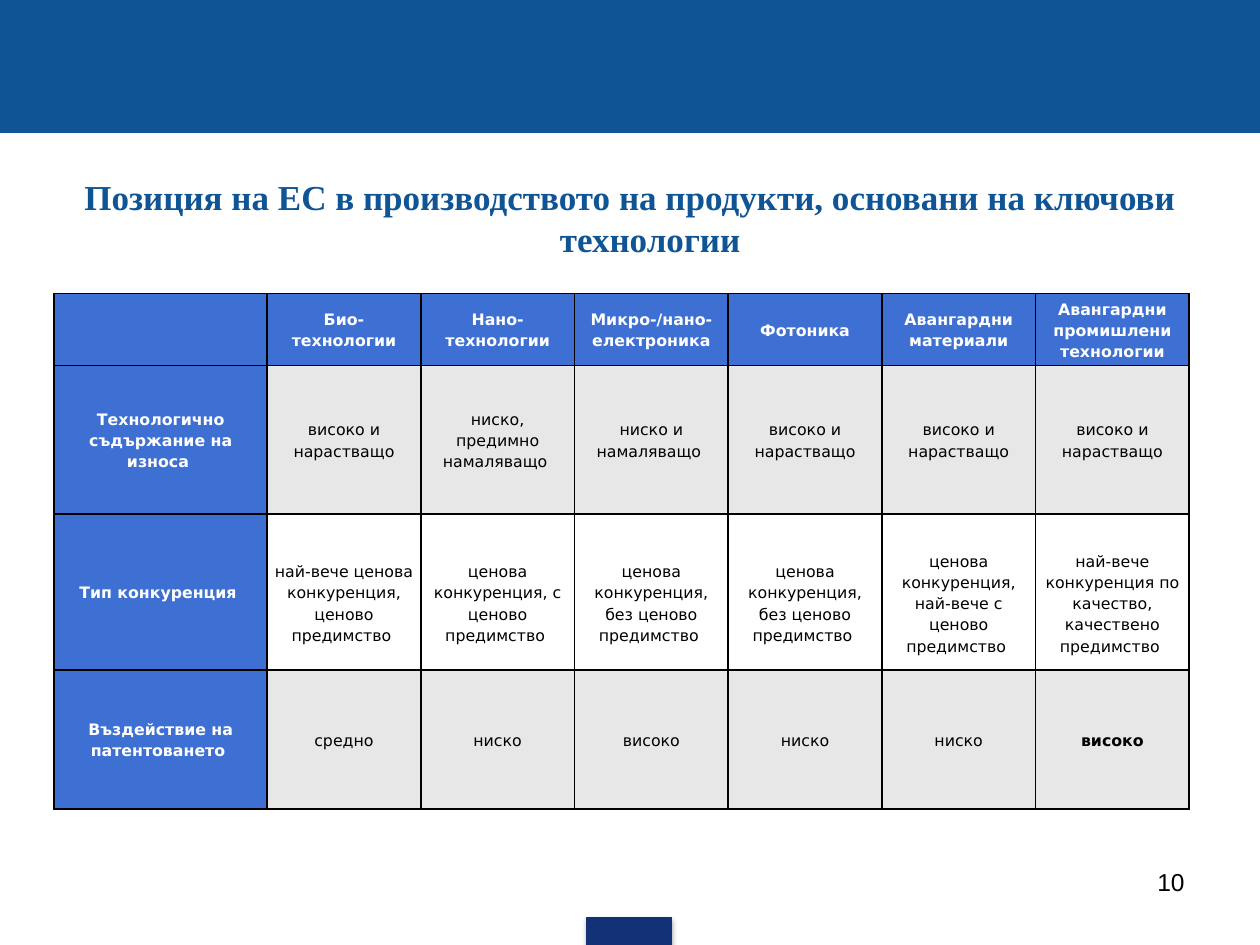
from lxml import etree
from pptx import Presentation
from pptx import util as u
from pptx.dml.color import RGBColor
from pptx.enum import shapes, text
from pptx.oxml import parse_xml
from pptx.oxml.ns import nsdecls, qn

WIDTH, HEIGHT = 10, 7.5
COLORS = {
    "band": "0F5494", "tab": "133176", "header": "3E6FD2", "shaded": "E7E7E7",
    "white": "FFFFFF", "black": "000000",
}
COLUMN_WIDTHS = [1.69] + [1.22] * 6
ROW_HEIGHTS = [0.57, 1.18, 1.24, 1.1]
ROW_FILLS = ["header", "shaded", "white", "shaded"]
ROW_TOP_INSETS = [0, 0, 0.17, 0]
RISING = "високо и нарастващо"
NO_ADVANTAGE = "ценова конкуренция, без ценово предимство "
ROWS = [
    ["", "Био-технологии", "Нано-технологии", "Микро-/нано-електроника", "Фотоника",
     "Авангардни материали", "Авангардни промишлени технологии"],
    ["Технологично съдържание на износа ", RISING, "ниско, предимно намаляващо ",
     "ниско и намаляващо ", RISING, RISING, RISING],
    ["Тип конкуренция ", "най-вече ценова конкуренция, ценово предимство ",
     "ценова конкуренция, с ценово предимство ", NO_ADVANTAGE, NO_ADVANTAGE,
     "ценова конкуренция, най-вече с ценово предимство ",
     "най-вече конкуренция по качество, качествено предимство "],
    ["Въздействие на патентоването ", "средно", "ниско", "високо", "ниско", "ниско", "високо"],
]
BOLD_CELL = (3, 6)


def color(name):
    return RGBColor.from_string(COLORS[name])


class SlideBuilder:
    """Holds the style and the current slide; places are shares of the slide's size."""

    def __init__(self, presentation):
        self.width, self.height = presentation.slide_width, presentation.slide_height
        self.slide = presentation.slides.add_slide(presentation.slide_layouts[5])

    def place(self, left, top, width, height):
        return (round(left * self.width), round(top * self.height),
                round(width * self.width), round(height * self.height))

    def add_run(self, paragraph, words, font, size, color_name, bold=False):
        run = paragraph.add_run()
        run.text = words
        run.font.name, run.font.size, run.font.bold = font, u.Pt(size), bold
        run.font.color.rgb = color(color_name)

    def rectangle(self, share, fill):
        shape = self.slide.shapes.add_shape(shapes.MSO_SHAPE.RECTANGLE, *self.place(*share))
        shape.shadow.inherit = False
        shape.fill.solid()
        shape.fill.fore_color.rgb = shape.line.color.rgb = color(fill)
        shape.line.width = u.Pt(0.75)
        return shape

    def shadow(self, shape):
        effects = shape.element.spPr.find(qn("a:effectLst"))
        effects.append(parse_xml(
            f'<a:outerShdw {nsdecls("a")} blurRad="{u.Pt(3.1)}" dist="{u.Pt(1.8)}" dir="5400000" '
            f'rotWithShape="0"><a:srgbClr val="{COLORS["black"]}"><a:alpha val="35000"/>'
            '</a:srgbClr></a:outerShdw>'))

    def title(self, share, words):
        title = self.slide.shapes.title
        title.left, title.top, title.width, title.height = self.place(*share)
        frame = title.text_frame
        frame.word_wrap = True
        frame.auto_size = text.MSO_AUTO_SIZE.NONE
        frame.vertical_anchor = text.MSO_ANCHOR.MIDDLE
        paragraph = frame.paragraphs[0]
        paragraph.alignment = text.PP_ALIGN.CENTER
        properties = paragraph._p.get_or_add_pPr()
        properties.set("marL", str(u.Inches(0.39)))
        properties.set("indent", str(u.Inches(-0.39)))
        self.add_run(paragraph, words, "Times New Roman", 20, "band", True)

    def page_number(self, share, words):
        frame = self.slide.shapes.add_textbox(*self.place(*share)).text_frame
        frame.word_wrap = True
        frame.paragraphs[0].alignment = text.PP_ALIGN.RIGHT
        self.add_run(frame.paragraphs[0], words, "Arial", 14, "black")

    def border(self, cell):
        properties = cell._tc.get_or_add_tcPr()
        for index, side in enumerate(("lnL", "lnR", "lnT", "lnB")):
            line = etree.Element(qn(f"a:{side}"), w=str(u.Pt(1)))
            fill = etree.SubElement(line, qn("a:solidFill"))
            etree.SubElement(fill, qn("a:srgbClr"), val=COLORS["black"])
            properties.insert(index, line)

    def cell(self, cell, words, fill, top_inset, bold):
        is_header = fill == "header"
        cell.fill.solid()
        cell.fill.fore_color.rgb = color(fill)
        self.border(cell)
        cell.vertical_anchor = text.MSO_ANCHOR.MIDDLE
        cell.margin_left = cell.margin_right = u.Inches(0.05)
        cell.margin_top, cell.margin_bottom = u.Inches(top_inset), 0
        paragraph = cell.text_frame.paragraphs[0]
        paragraph.alignment = text.PP_ALIGN.CENTER
        paragraph.line_spacing = 1.15
        if words:
            self.add_run(paragraph, words, "DejaVu Sans", 9,
                         "white" if is_header else "black", is_header or bold)

    def table(self, share):
        table = self.slide.shapes.add_table(
            len(ROWS), len(COLUMN_WIDTHS), *self.place(*share)).table
        table.first_row = table.horz_banding = False
        for column, width in zip(table.columns, COLUMN_WIDTHS):
            column.width = u.Inches(width)
        for row, height in zip(table.rows, ROW_HEIGHTS):
            row.height = u.Inches(height)
        for i, words_in_row in enumerate(ROWS):
            for j, words in enumerate(words_in_row):
                fill = ROW_FILLS[i] if j else "header"
                inset = ROW_TOP_INSETS[i] if j else 0
                self.cell(table.cell(i, j), words, fill, inset, (i, j) == BOLD_CELL)


def main():
    presentation = Presentation()
    presentation.slide_width, presentation.slide_height = u.Inches(WIDTH), u.Inches(HEIGHT)
    builder = SlideBuilder(presentation)
    builder.rectangle((0, 0, 1, 0.14), "band")
    builder.shadow(builder.rectangle((0.466, 7.28 / HEIGHT, 0.067, 0.22 / HEIGHT), "tab"))
    builder.table((0.043, 2.33 / HEIGHT, sum(COLUMN_WIDTHS) / WIDTH, sum(ROW_HEIGHTS) / HEIGHT))
    builder.title((0, 1.29 / HEIGHT, 1, 0.87 / HEIGHT),
                  "Позиция на ЕС в производството на продукти, основани на ключови технологии ")
    builder.page_number((0.717, 6.83 / HEIGHT, 0.233, 0.52 / HEIGHT), "10")
    presentation.save("out.pptx")


if __name__ == "__main__":
    main()
